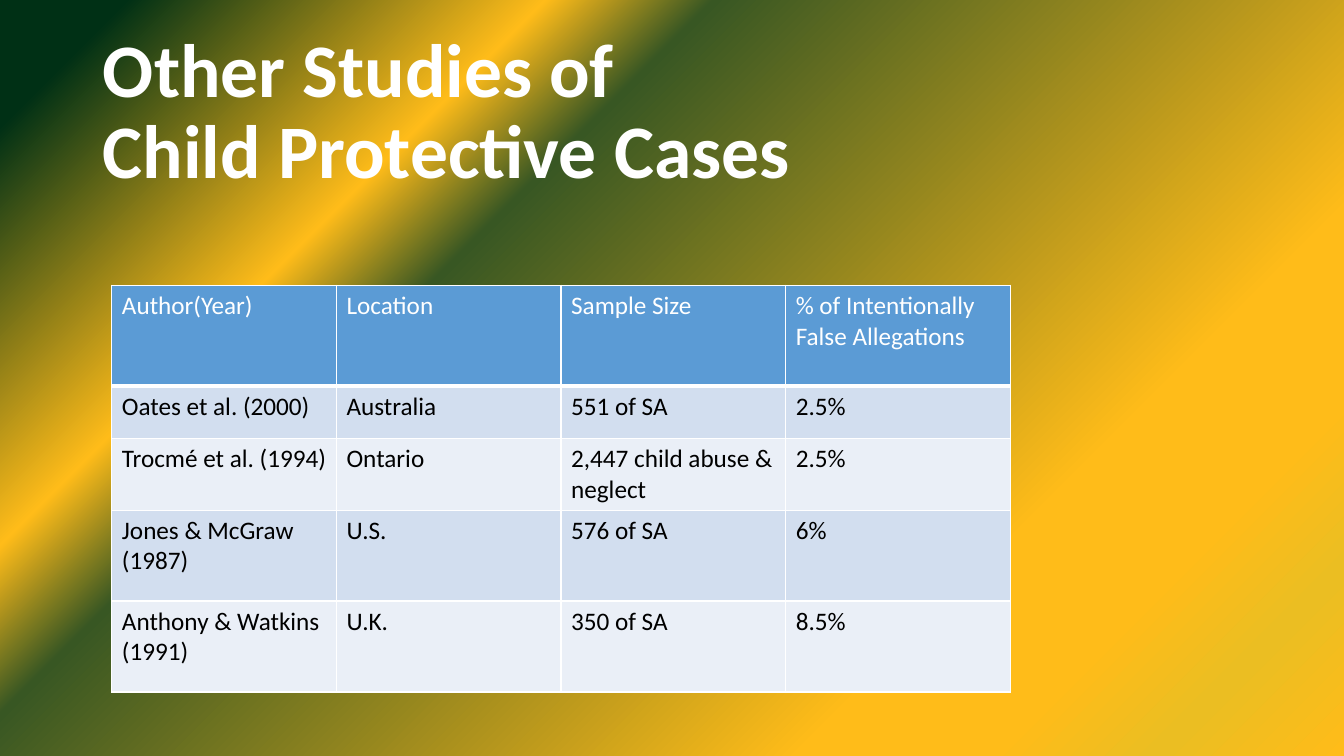
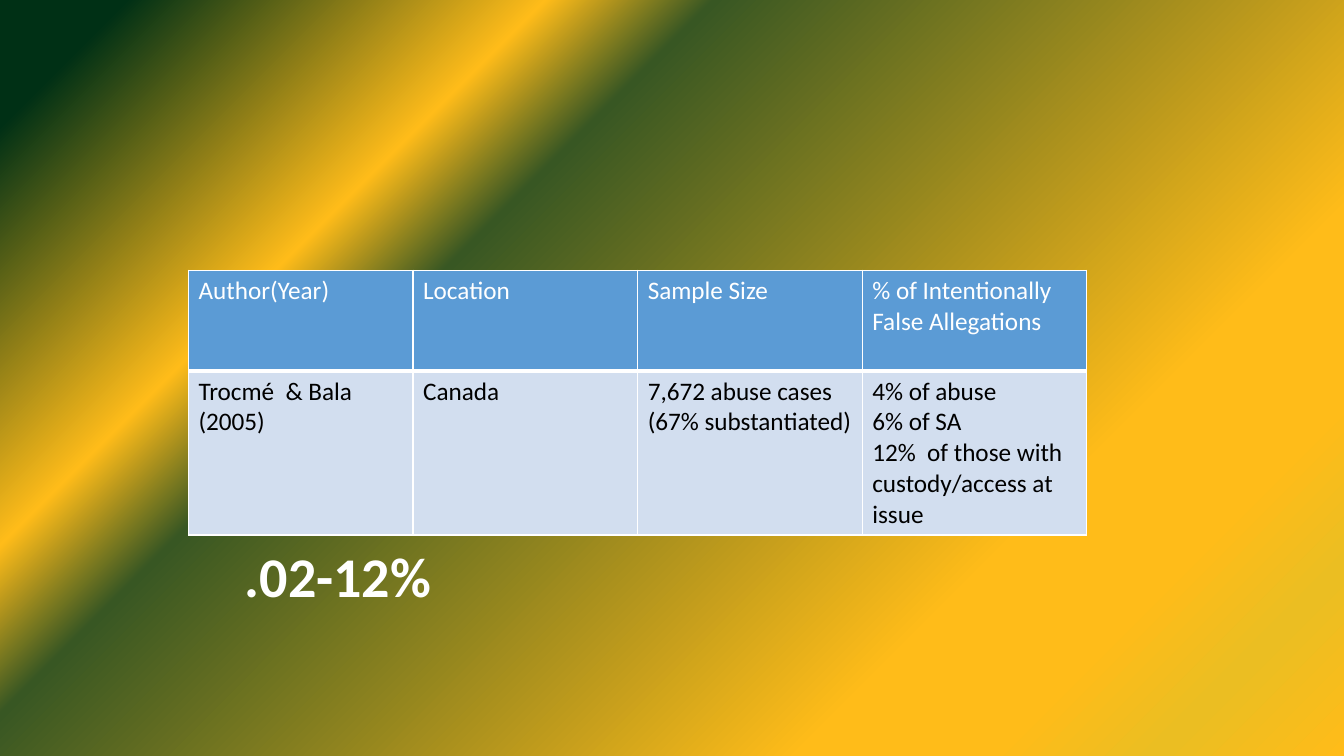
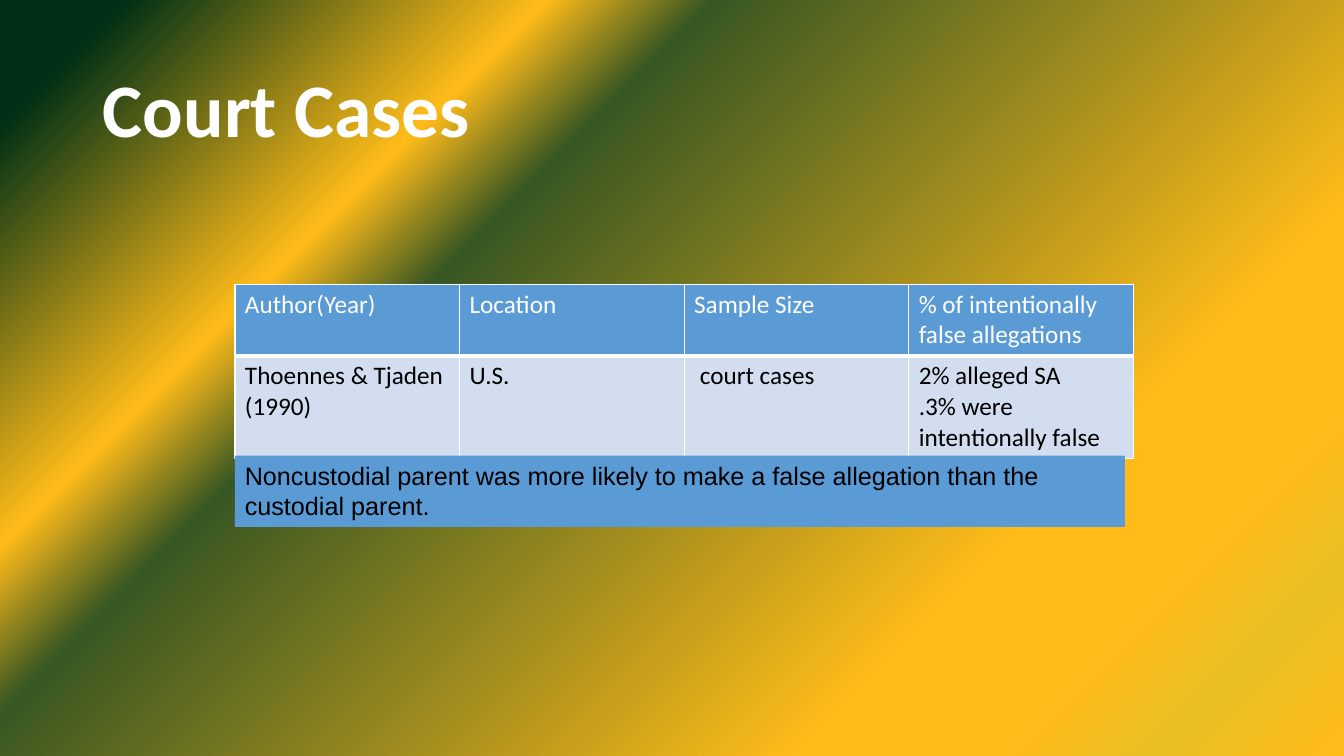
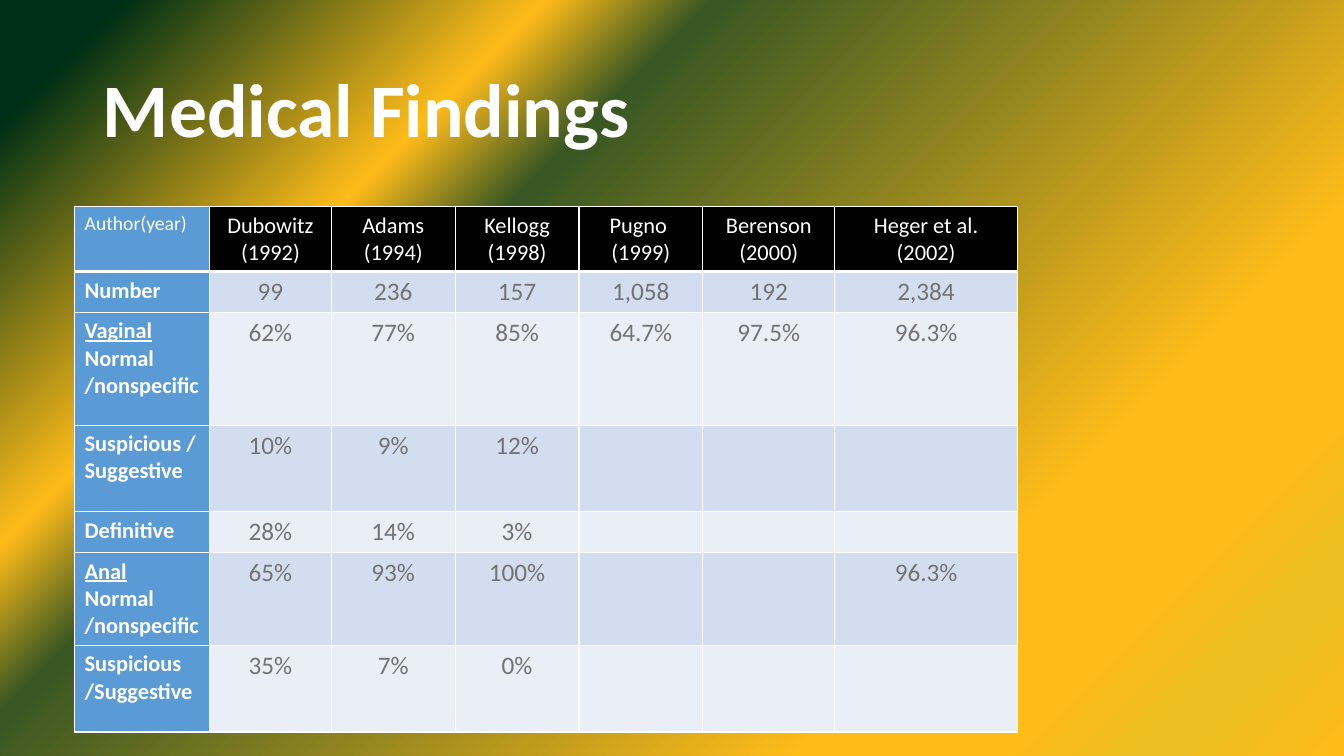
from lxml import etree
from pptx import Presentation
from pptx.dml.color import RGBColor
from pptx.enum.shapes import MSO_SHAPE
from pptx.enum.text import MSO_ANCHOR, MSO_AUTO_SIZE, PP_ALIGN
from pptx.oxml.ns import qn
from pptx.util import Cm, Pt

# Colours and fonts
WHITE = RGBColor(0xFF, 0xFF, 0xFF)
BLACK = RGBColor(0x00, 0x00, 0x00)
GRAY = RGBColor(0x73, 0x73, 0x73)
BLUE = RGBColor(0x5B, 0x9B, 0xD5)
BANDS = (RGBColor(0xD2, 0xDE, 0xEF), RGBColor(0xEA, 0xEF, 0xF7))
DARK_GREEN = RGBColor(0x00, 0x30, 0x15)
GREEN = RGBColor(0x38, 0x57, 0x23)
GOLD = RGBColor(0xFF, 0xBC, 0x19)
LIME = RGBColor(0xEB, 0xBE, 0x22)
BACKGROUND_STOPS = ((6, DARK_GREEN), (26, GOLD), (34, GREEN), (74, GOLD),
                    (83, GOLD), (91, LIME), (100, GOLD))
BACKGROUND_ANGLE = 45
FONT = "Calibri"
NOTE_FONT = "Arial"
TITLE_LAYOUT, BLANK_LAYOUT = 5, 6

# Content: lengths in centimetres, "\n" starts a paragraph
STUDY_COLUMNS = [5.66] * 4
STUDY_HEADER = ["Author(Year)", "Location", "Sample Size",
                "% of Intentionally False Allegations"]

PROTECTIVE_CASES = {
    "position": (2.82, 7.19),
    "columns": STUDY_COLUMNS,
    "heights": [2.54, 1.32, 1.78, 2.29, 2.29],
    "rows": [
        STUDY_HEADER,
        ["Oates et al. (2000)", "Australia", "551 of SA", "2.5%"],
        ["Trocmé et al. (1994)", "Ontario", "2,447 child abuse & neglect", "2.5%"],
        ["Jones & McGraw (1987)", "U.S.", "576 of SA", "6%"],
        ["Anthony & Watkins (1991)", "U.K.", "350 of SA", "8.5%"],
    ],
}
CANADIAN_CASES = {
    "position": (4.75, 6.81),
    "columns": STUDY_COLUMNS,
    "heights": [2.54, 4.06],
    "rows": [
        STUDY_HEADER,
        ["Trocmé  & Bala (2005)", "Canada",
         "7,672 abuse cases\n(67% substantiated)",
         "4% of abuse\n6% of SA\n12%  of those with custody/access at issue"],
    ],
}
COURT_CASES = {
    "position": (5.92, 7.16),
    "columns": STUDY_COLUMNS,
    "heights": [1.78, 2.54],
    "rows": [
        STUDY_HEADER[:3] + ["% of intentionally false allegations"],
        ["Thoennes & Tjaden (1990)", "U.S.", " court cases",
         "2% alleged SA\n.3% were intentionally false"],
    ],
}
MEDICAL_FINDINGS = {
    "position": (1.88, 5.21),
    "columns": [3.4, 3.07, 3.12, 3.12, 3.12, 3.33, 4.6],
    "heights": [1.55, 0.97, 2.84, 2.18, 0.97, 2.34, 2.18],
    "rows": [
        ["Author(year)", "Dubowitz (1992)", "Adams (1994)", "Kellogg (1998)",
         "Pugno  (1999)", "Berenson (2000)", "Heger et al. (2002)"],
        ["Number", "99", "236", "157", "1,058", "192", "2,384"],
        ["Vaginal\nNormal /nonspecific", "62%", "77%", "85%", "64.7%", "97.5%", "96.3%"],
        ["Suspicious /Suggestive", "10%", "9%", "12%", "", "", ""],
        ["Definitive", "28%", "14%", "3%", "", "", ""],
        ["Anal\nNormal /nonspecific", "65%", "93%", "100%", "", "", "96.3%"],
        ["Suspicious\n/Suggestive", "35%", "7%", "0%", "", "", ""],
    ],
}
UNDERLINED = ("Vaginal", "Anal")
RANGE_TEXT = ".02-12%"
COURT_NOTE = ("Noncustodial parent was more likely to make a false allegation "
              "than the custodial parent.")


def set_background(master):
    """Give every slide the diagonal gradient."""
    fill = master.background.fill
    fill.gradient()
    gradient = master.element.find(".//" + qn("p:bgPr")).find(qn("a:gradFill"))
    for child in list(gradient):
        gradient.remove(child)
    stops = etree.SubElement(gradient, qn("a:gsLst"))
    for percent, color in BACKGROUND_STOPS:
        stop = etree.SubElement(stops, qn("a:gs"), pos=str(percent * 1000))
        etree.SubElement(stop, qn("a:srgbClr"), val=str(color))
    etree.SubElement(gradient, qn("a:lin"), ang=str(BACKGROUND_ANGLE * 60000), scaled="0")


def format_paragraph(paragraph, size, color, bold=False, font=FONT, align=PP_ALIGN.LEFT):
    paragraph.alignment = align
    for run in paragraph.runs:
        run.font.name = font
        run.font.size = Pt(size)
        run.font.bold = bold
        run.font.color.rgb = color


def add_titled_slide(presentation, text, width=29.21):
    slide = presentation.slides.add_slide(presentation.slide_layouts[TITLE_LAYOUT])
    title = slide.shapes.title
    title.left, title.top, title.width, title.height = Cm(2.34), Cm(1.02), Cm(width), Cm(3.68)
    text_frame = title.text_frame
    text_frame.text = text
    text_frame.auto_size = MSO_AUTO_SIZE.NONE
    text_frame.vertical_anchor = MSO_ANCHOR.MIDDLE
    paragraph = text_frame.paragraphs[0]
    paragraph.line_spacing = 0.9
    format_paragraph(paragraph, 54, WHITE, bold=True)
    return slide


def set_borders(cell, bottom):
    properties = cell._tc.get_or_add_tcPr()
    for side, width in (("L", 1), ("R", 1), ("T", 1), ("B", bottom)):
        line = etree.SubElement(properties, qn("a:ln" + side), w=str(Pt(width)))
        fill = etree.SubElement(line, qn("a:solidFill"))
        etree.SubElement(fill, qn("a:srgbClr"), val=str(WHITE))


def study_style(row, column):
    """Fill, size, colour, bold and alignment of a cell in a study table."""
    if row == 0:
        return BLUE, 18, WHITE, False, PP_ALIGN.LEFT
    return BANDS[(row - 1) % 2], 18, BLACK, False, PP_ALIGN.LEFT


def medical_style(row, column):
    """The same for the table of medical findings."""
    if column == 0:
        return BLUE, 16 if row else 14, WHITE, row > 0, PP_ALIGN.LEFT
    if row == 0:
        return BLACK, 16, WHITE, False, PP_ALIGN.CENTER
    return BANDS[(row - 1) % 2], 18, GRAY, False, PP_ALIGN.CENTER


def add_table(slide, content, style=study_style):
    rows, columns, heights = content["rows"], content["columns"], content["heights"]
    left, top = content["position"]
    table = slide.shapes.add_table(len(rows), len(columns), Cm(left), Cm(top),
                                   Cm(sum(columns)), Cm(sum(heights))).table
    for column, width in zip(table.columns, columns):
        column.width = Cm(width)
    for row, height in zip(table.rows, heights):
        row.height = Cm(height)
    for row_index, row_texts in enumerate(rows):
        for column_index, text in enumerate(row_texts):
            cell = table.cell(row_index, column_index)
            fill, size, color, bold, align = style(row_index, column_index)
            set_borders(cell, bottom=1 if row_index else 3)
            cell.fill.solid()
            cell.fill.fore_color.rgb = fill
            cell.text_frame.text = text
            for paragraph in cell.text_frame.paragraphs:
                format_paragraph(paragraph, size, color, bold, align=align)
                if paragraph.text in UNDERLINED:
                    paragraph.runs[0].font.underline = True


def add_range(slide):
    box = slide.shapes.add_textbox(Cm(5.92), Cm(12.9), Cm(22.86), Cm(3.18))
    text_frame = box.text_frame
    text_frame.word_wrap = True
    text_frame.vertical_anchor = MSO_ANCHOR.MIDDLE
    text_frame.text = RANGE_TEXT
    format_paragraph(text_frame.paragraphs[0], 40, WHITE, bold=True)


def add_court_note(slide):
    note = slide.shapes.add_shape(MSO_SHAPE.RECTANGLE, Cm(5.92), Cm(11.48), Cm(22.43), Cm(1.8))
    note.shadow.inherit = False
    note.fill.solid()
    note.fill.fore_color.rgb = BLUE
    note.line.fill.background()
    text_frame = note.text_frame
    text_frame.word_wrap = True
    text_frame.vertical_anchor = MSO_ANCHOR.TOP
    text_frame.text = COURT_NOTE
    format_paragraph(text_frame.paragraphs[0], 18, BLACK, font=NOTE_FONT)


def main():
    presentation = Presentation()
    presentation.slide_width, presentation.slide_height = Cm(33.87), Cm(19.05)
    set_background(presentation.slide_master)

    # Child protective cases ("\v" breaks the line)
    slide = add_titled_slide(presentation, "Other Studies of \vChild Protective Cases", 30.35)
    add_table(slide, PROTECTIVE_CASES)

    # Canadian cases and the overall range
    slide = presentation.slides.add_slide(presentation.slide_layouts[BLANK_LAYOUT])
    add_table(slide, CANADIAN_CASES)
    add_range(slide)

    # Court cases
    slide = add_titled_slide(presentation, "Court Cases")
    add_table(slide, COURT_CASES)
    add_court_note(slide)

    # Medical findings
    slide = add_titled_slide(presentation, "Medical Findings")
    add_table(slide, MEDICAL_FINDINGS, medical_style)

    presentation.save("out.pptx")


if __name__ == "__main__":
    main()
